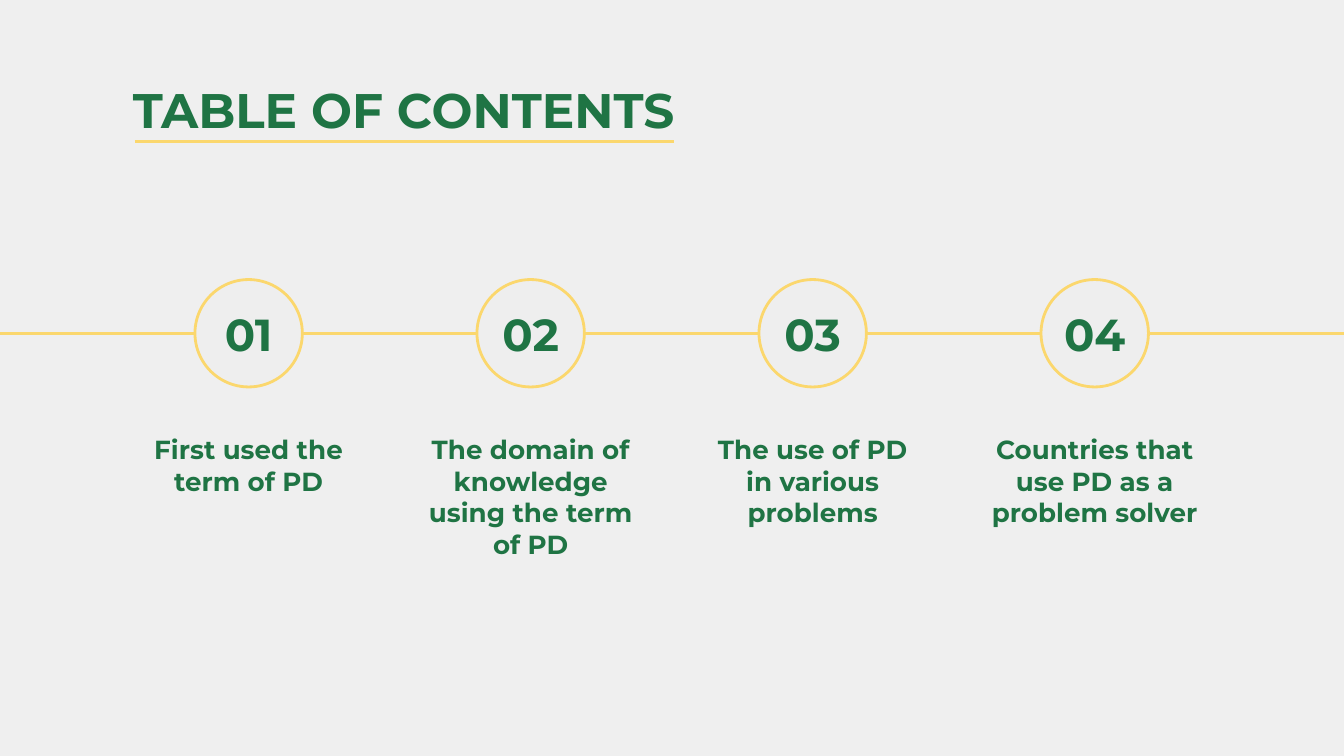
from pptx import Presentation
from pptx.dml.color import RGBColor
from pptx.enum.shapes import MSO_CONNECTOR as Connector, MSO_SHAPE as Shape
from pptx.enum.text import MSO_ANCHOR as Anchor, MSO_AUTO_SIZE as AutoSize, PP_ALIGN as Align
from pptx.oxml.ns import qn
from pptx.util import Cm, Pt
from lxml.etree import SubElement

FONT = "Montserrat"
GREEN, YELLOW = "1F7444", "FBD76D"
BACKGROUND, CIRCLE_FILL = "EFEFEF", "EEEEEE"

SLIDE_WIDTH, SLIDE_HEIGHT = 25.4, 14.29
FIRST_CENTER, STEP = 4.7, 5.33
TIMELINE_Y, DIAMETER, COLUMN_WIDTH = 6.3, 2.03, 4.7
SECTIONS = [
    "First used the term of PD",
    "The domain of knowledge using the term of PD",
    "The use of PD in various problems",
    "Countries that use PD as a problem solver",
]


def color(hex_string):
    return RGBColor.from_string(hex_string)


def style_line(line):
    line.color.rgb = color(YELLOW)
    line.width = Pt(1.5)


def add_line(slide, left, right, y):
    connector = slide.shapes.add_connector(
        Connector.STRAIGHT, Cm(left), Cm(y), Cm(right), Cm(y))
    style_line(connector.line)
    SubElement(connector.element.spPr, qn("a:effectLst"))


def add_circle(slide, center):
    circle = slide.shapes.add_shape(
        Shape.OVAL, Cm(center - DIAMETER / 2), Cm(TIMELINE_Y - DIAMETER / 2),
        Cm(DIAMETER), Cm(DIAMETER))
    circle.shadow.inherit = False
    circle.fill.solid()
    circle.fill.fore_color.rgb = color(CIRCLE_FILL)
    style_line(circle.line)


def write(shape, text, size, align=Align.CENTER, anchor=Anchor.TOP):
    frame = shape.text_frame
    frame.text = text
    frame.word_wrap = True
    frame.auto_size = AutoSize.NONE
    frame.vertical_anchor = anchor
    frame.margin_left = frame.margin_right = Cm(0.25)
    frame.margin_top = frame.margin_bottom = Cm(0.25)
    paragraph = frame.paragraphs[0]
    paragraph.alignment = align
    font = paragraph.runs[0].font
    font.name, font.size, font.bold = FONT, Pt(size), True
    font.color.rgb = color(GREEN)


def add_title(slide, text):
    title = slide.shapes.title
    title.left, title.top = Cm(2.26), Cm(1.27)
    title.width, title.height = Cm(20.85), Cm(1.6)
    write(title, text, 26, Align.LEFT)
    add_line(slide, 2.55, 12.73, 2.67)


def add_column_text(slide, center, top, height, text, size, anchor=Anchor.TOP):
    box = slide.shapes.add_textbox(
        Cm(center - COLUMN_WIDTH / 2), Cm(top), Cm(COLUMN_WIDTH), Cm(height))
    write(box, text, size, anchor=anchor)


def add_section(slide, index, text):
    center = FIRST_CENTER + index * STEP
    add_circle(slide, center)
    add_column_text(slide, center, 5.61, 1.4, f"{index + 1:02d}", 24, Anchor.MIDDLE)
    add_column_text(slide, center, 7.95, 1.6, text, 14)


def main():
    presentation = Presentation()
    presentation.slide_width = Cm(SLIDE_WIDTH)
    presentation.slide_height = Cm(SLIDE_HEIGHT)
    slide = presentation.slides.add_slide(presentation.slide_layouts.get_by_name("Title Only"))
    slide.background.fill.solid()
    slide.background.fill.fore_color.rgb = color(BACKGROUND)

    add_title(slide, "TABLE OF CONTENTS")
    add_line(slide, -0.05, SLIDE_WIDTH + 0.05, TIMELINE_Y)
    for index, text in enumerate(SECTIONS):
        add_section(slide, index, text)

    presentation.save("out.pptx")


if __name__ == "__main__":
    main()
